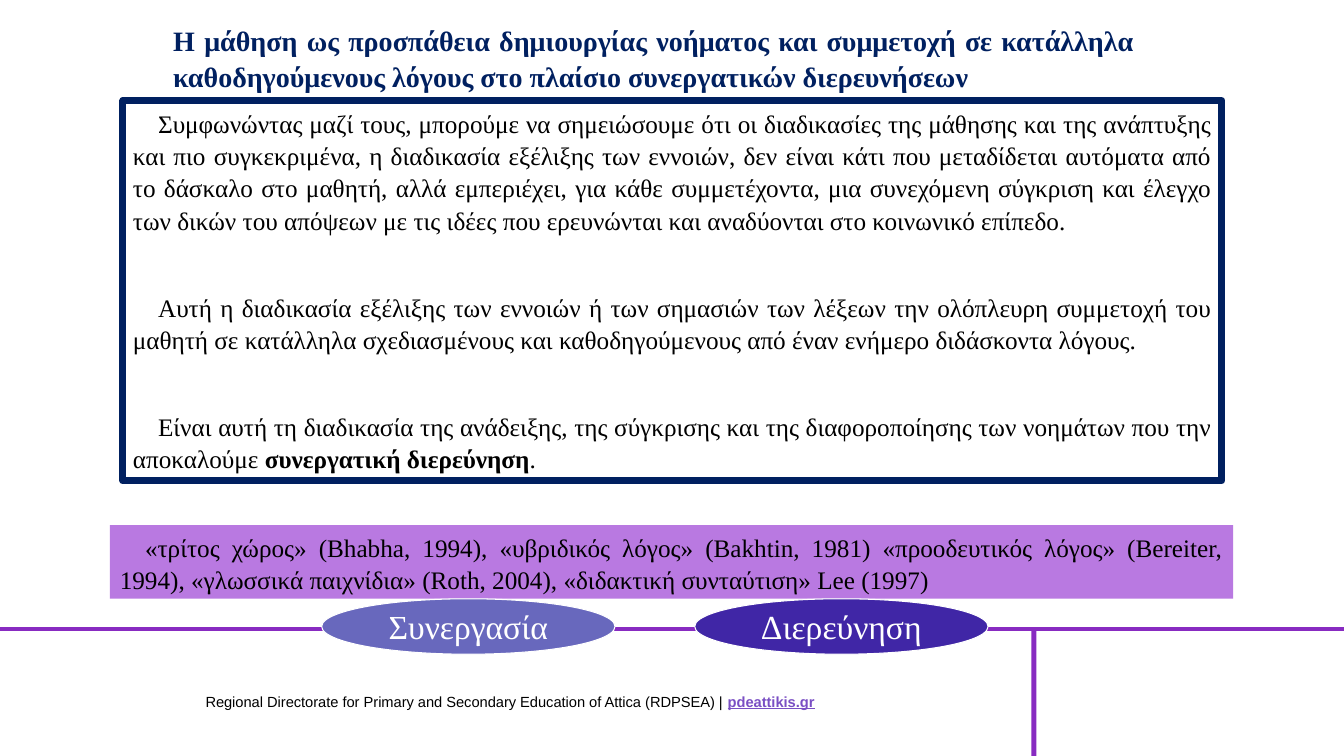
from dataclasses import dataclass
from typing import Optional

import lxml.etree
import pptx
import pptx.dml.color
import pptx.enum.shapes
import pptx.enum.text
import pptx.oxml.ns
import pptx.shapes.autoshape
import pptx.slide
import pptx.util

Inches = pptx.util.Inches
Align = pptx.enum.text.PP_ALIGN
Preset = pptx.enum.shapes.MSO_SHAPE


@dataclass(frozen=True)
class Theme:
    serif: str = "Times New Roman"
    sans: str = "Arial"
    navy: str = "002060"
    purple: str = "882BC1"
    lilac: str = "B979E1"
    periwinkle: str = "6868BD"
    indigo: str = "4026A6"
    link: str = "7A4FC4"
    black: str = "000000"
    white: str = "FFFFFF"
    title_size: float = 20
    body_size: float = 18
    label_size: float = 24
    footer_size: float = 10.5


THEME = Theme()


@dataclass(frozen=True)
class Box:
    left: float
    top: float
    width: float
    height: float


@dataclass(frozen=True)
class Run:
    text: str
    color: str = THEME.black
    bold: bool = False
    underline: bool = False


@dataclass(frozen=True)
class TextStyle:
    size: float
    font: str = THEME.serif
    align: Optional[Align] = None
    indent: float = 0
    line_spacing: float = 1
    gap: float = 0
    wrap: bool = True
    anchor: pptx.enum.text.MSO_ANCHOR = pptx.enum.text.MSO_ANCHOR.TOP


@dataclass(frozen=True)
class Label:
    text: str
    left: float
    fill: str


FOOTER = TextStyle(THEME.footer_size, THEME.sans, wrap=False)
TITLE = TextStyle(THEME.title_size, align=Align.JUSTIFY, line_spacing=1.07)
BODY = TextStyle(THEME.body_size, align=Align.JUSTIFY, indent=0.25, line_spacing=1.07, gap=39)
LABEL = TextStyle(THEME.label_size, align=Align.CENTER, wrap=False,
                  anchor=pptx.enum.text.MSO_ANCHOR.MIDDLE)

FOOTER_TEXT = [[
    Run("Regional Directorate for Primary and Secondary Education of Attica (RDPSEA) | "),
    Run("pdeattikis.gr", THEME.link, bold=True, underline=True),
]]
TITLE_TEXT = [[Run(
    "Η μάθηση ως προσπάθεια δημιουργίας νοήματος και συμμετοχή σε κατάλληλα "
    "καθοδηγούμενους λόγους στο πλαίσιο συνεργατικών διερευνήσεων", THEME.navy, bold=True)]]
BODY_TEXT = [
    [Run("Συμφωνώντας μαζί τους, μπορούμε να σημειώσουμε ότι οι διαδικασίες της μάθησης και της "
         "ανάπτυξης και πιο συγκεκριμένα, η διαδικασία εξέλιξης των εννοιών, δεν είναι κάτι που "
         "μεταδίδεται αυτόματα από το δάσκαλο στο μαθητή, αλλά εμπεριέχει, για κάθε συμμετέχοντα, "
         "μια συνεχόμενη σύγκριση και έλεγχο των δικών του απόψεων με τις ιδέες που ερευνώνται "
         "και αναδύονται στο κοινωνικό επίπεδο.")],
    [Run("Αυτή η διαδικασία εξέλιξης των εννοιών ή των σημασιών των λέξεων την ολόπλευρη "
         "συμμετοχή του μαθητή σε κατάλληλα σχεδιασμένους και καθοδηγούμενους από έναν ενήμερο "
         "διδάσκοντα λόγους.")],
    [Run("Είναι αυτή τη διαδικασία της ανάδειξης, της σύγκρισης και της διαφοροποίησης των "
         "νοημάτων που την αποκαλούμε "),
     Run("συνεργατική διερεύνηση", bold=True),
     Run(".")],
]
SOURCES_TEXT = [[Run(
    "«τρίτος χώρος» (Bhabha, 1994), «υβριδικός λόγος» (Bakhtin, 1981) «προοδευτικός λόγος» "
    "(Bereiter, 1994), «γλωσσικά παιχνίδια» (Roth, 2004), «διδακτική συνταύτιση» Lee (1997)")]]
LABELS = [
    Label("Συνεργασία", 3.19, THEME.periwinkle),
    Label("Διερεύνηση", 6.89, THEME.indigo),
]


def rgb(color: str) -> pptx.dml.color.RGBColor:
    return pptx.dml.color.RGBColor.from_string(color)


def write_text(frame: pptx.text.text.TextFrame, paragraphs: list[list[Run]],
               style: TextStyle) -> None:
    frame.word_wrap = style.wrap
    frame.vertical_anchor = style.anchor
    for index, runs in enumerate(paragraphs):
        paragraph = frame.add_paragraph() if index else frame.paragraphs[0]
        paragraph.alignment = style.align
        paragraph.line_spacing = style.line_spacing
        if index < len(paragraphs) - 1:
            paragraph.space_after = pptx.util.Pt(style.gap)
        if style.indent:
            paragraph._p.get_or_add_pPr().set("indent", str(Inches(style.indent)))
        for item in runs:
            run = paragraph.add_run()
            run.text = item.text
            run.font.name = style.font
            run.font.size = pptx.util.Pt(style.size)
            run.font.bold = item.bold
            run.font.underline = item.underline
            run.font.color.rgb = rgb(item.color)


def add_text(slide: pptx.slide.Slide, box: Box, paragraphs: list[list[Run]],
             style: TextStyle) -> None:
    text_box = slide.shapes.add_textbox(
        Inches(box.left), Inches(box.top), Inches(box.width), Inches(box.height))
    write_text(text_box.text_frame, paragraphs, style)


def add_panel(slide: pptx.slide.Slide, preset: Preset, box: Box, fill: Optional[str] = None,
              line: Optional[str] = None,
              line_width: float = 0) -> pptx.shapes.autoshape.Shape:
    """Add a preset shape; a missing fill or line colour leaves that part empty."""
    shape = slide.shapes.add_shape(
        preset, Inches(box.left), Inches(box.top), Inches(box.width), Inches(box.height))
    shape.shadow.inherit = False
    if fill:
        shape.fill.solid()
        shape.fill.fore_color.rgb = rgb(fill)
    else:
        shape.fill.background()
    if line:
        shape.line.color.rgb = rgb(line)
        shape.line.width = pptx.util.Pt(line_width)
    else:
        shape.line.fill.background()
    return shape


def add_rule(slide: pptx.slide.Slide, top: float, width: float) -> None:
    """Draw the horizontal line across the slide."""
    rule = slide.shapes.add_connector(
        pptx.enum.shapes.MSO_CONNECTOR.STRAIGHT,
        Inches(0), Inches(top), Inches(width), Inches(top))
    rule.line.color.rgb = rgb(THEME.purple)
    rule.line.width = pptx.util.Pt(3)
    lxml.etree.SubElement(rule._element.spPr, pptx.oxml.ns.qn("a:effectLst"))


def main() -> None:
    slide_width, slide_height, rule_top = 13.33, 7.5, 6.24
    presentation = pptx.Presentation()
    presentation.slide_width = Inches(slide_width)
    presentation.slide_height = Inches(slide_height)
    slide = presentation.slides.add_slide(presentation.slide_layouts[6])

    add_text(slide, Box(1.94, 6.82, 6.4, 0.28), FOOTER_TEXT, FOOTER)
    add_rule(slide, rule_top, slide_width)
    add_panel(slide, Preset.RECTANGLE,
              Box(10.23, rule_top, 0.05, slide_height - rule_top), THEME.purple)
    add_text(slide, Box(1.62, 0.16, 9.73, 0.8), TITLE_TEXT, TITLE)

    body = add_panel(slide, Preset.RECTANGLE, Box(1.22, 1, 10.9, 3.77),
                     line=THEME.navy, line_width=5)
    write_text(body.text_frame, BODY_TEXT, BODY)
    sources = add_panel(slide, Preset.RECTANGLE, Box(1.09, 5.21, 11.14, 0.73), THEME.lilac)
    write_text(sources.text_frame, SOURCES_TEXT, BODY)

    for label in LABELS:
        ellipse = add_panel(slide, Preset.OVAL, Box(label.left, 5.94, 2.91, 0.55),
                            label.fill, THEME.white, 0.75)
        write_text(ellipse.text_frame, [[Run(label.text, THEME.white)]], LABEL)

    presentation.save("out.pptx")


if __name__ == "__main__":
    main()
